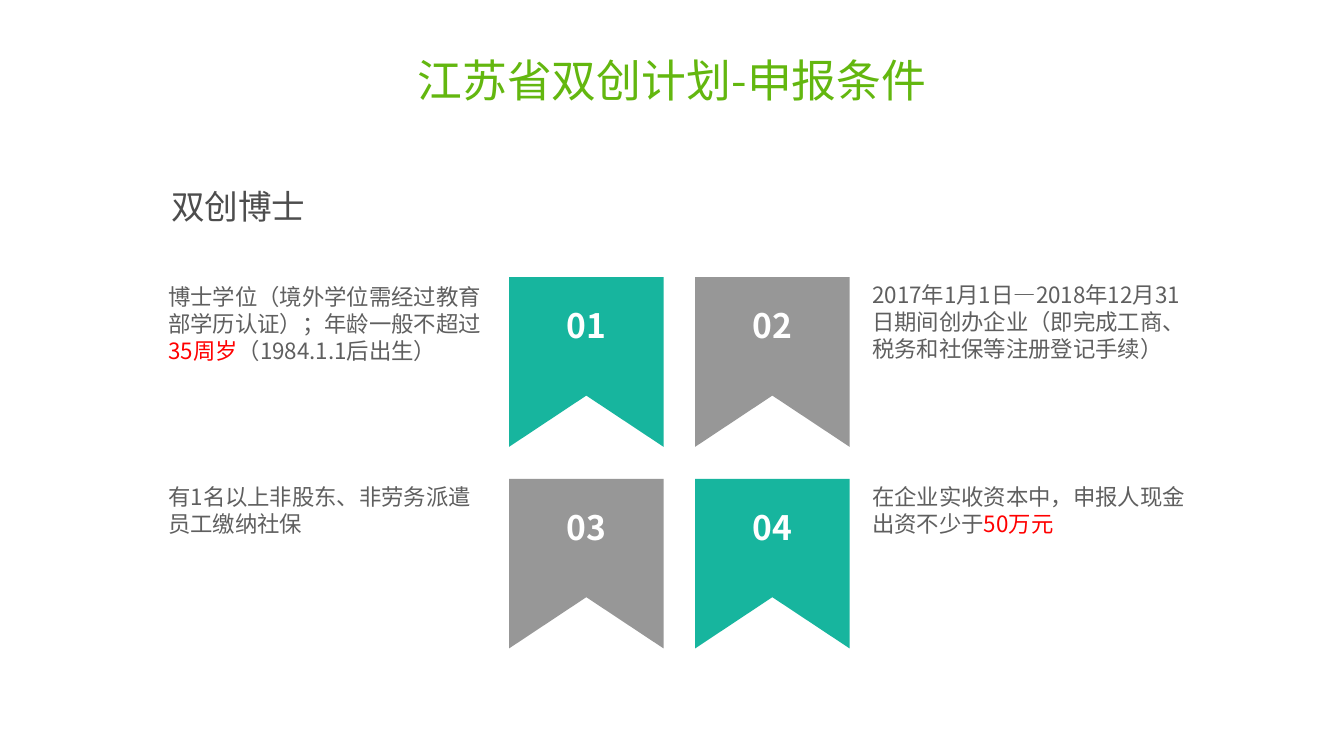
from dataclasses import dataclass

from lxml.etree import SubElement as SubEl
from pptx import Presentation
from pptx.dml.color import RGBColor as Rgb
from pptx.enum.shapes import MSO_SHAPE as Kind
from pptx.enum.text import MSO_ANCHOR as Anchor, PP_ALIGN as Align
from pptx.oxml.ns import qn
from pptx.util import Emu, Inches, Pt


@dataclass(frozen=True)
class Theme:
    font: str = "Noto Sans CJK SC"
    title: Rgb = Rgb(0x63, 0xB7, 0x0F)
    head: Rgb = Rgb(0x4D, 0x4D, 0x4D)
    body: Rgb = Rgb(0x5F, 0x5F, 0x5F)
    alert: Rgb = Rgb(0xFF, 0x00, 0x00)
    white: Rgb = Rgb(0xFF, 0xFF, 0xFF)
    teal: Rgb = Rgb(0x17, 0xB5, 0x9E)
    gray: Rgb = Rgb(0x97, 0x97, 0x97)
    big: int = 32
    mid: int = 24
    small: int = 16


@dataclass(frozen=True)
class Box:
    """Place and size in grid columns and rows."""
    col: float
    row: float
    wide: float
    high: float

    def emu(self) -> list[Emu]:
        return [unit(n) for n in (self.col, self.row, self.wide, self.high)]


@dataclass(frozen=True)
class Bit:
    words: str
    color: Rgb


@dataclass(frozen=True)
class Item:
    label: str
    fill: Rgb
    bits: tuple[Bit, ...]
    drop: float = 0


# Grid: 160 columns by 90 rows of square cells
COLS, ROWS = 160, 90
CELL = Inches(7.5) / ROWS
LOOK = Theme()

# Ribbon layout
LEFT, TOP = 60.6, 33
WIDE, HIGH, NOTCH = 18.4, 20.2, 6.1
STEP_X, STEP_Y = 22.15, 24
TAG_W, TAG_H, TAG_Y = 9, 6, 2.75

# Column and width of the notes on either side
SIDES = ((19.2, 39.8), (103, 39.5))

ITEMS = (
    Item("01", LOOK.teal, (
        Bit("博士学位（境外学位需经过教育部学历认证）；年龄一般不超过", LOOK.body),
        Bit("35周岁", LOOK.alert),
        Bit("（1984.1.1后出生）", LOOK.body)), 0.2),
    Item("02", LOOK.gray, (
        Bit("2017年1月1日—2018年12月31日期间创办企业"
            "（即完成工商、税务和社保等注册登记手续）", LOOK.body),)),
    Item("03", LOOK.gray, (
        Bit("有1名以上非股东、非劳务派遣员工缴纳社保", LOOK.body),)),
    Item("04", LOOK.teal, (
        Bit("在企业实收资本中，申报人现金出资不少于", LOOK.body),
        Bit("50万元", LOOK.alert))),
)


def unit(cells: float) -> Emu:
    return Emu(round(cells * CELL))


def add_run(para, bit: Bit, size: int, bold: bool = False) -> None:
    run = para.add_run()
    run.text = bit.words
    font = run.font
    font.name, font.size, font.bold = LOOK.font, Pt(size), bold
    font.color.rgb = bit.color
    SubEl(run._r.get_or_add_rPr(), qn("a:ea")).set("typeface", LOOK.font)


def add_text(slide, box: Box, bits: tuple[Bit, ...], size: int,
             align=Align.LEFT, anchor=Anchor.TOP, space: float = 1):
    frame = slide.shapes.add_textbox(*box.emu()).text_frame
    frame.word_wrap = True
    frame.vertical_anchor = anchor
    para = frame.paragraphs[0]
    para.alignment, para.line_spacing = align, space
    for bit in bits:
        add_run(para, bit, size)
    return frame


def paint(shape, fill: Rgb) -> None:
    shape.shadow.inherit = False
    shape.fill.solid()
    shape.fill.fore_color.rgb = fill
    shape.line.fill.background()


def add_flag(slide, col: float, row: float, item: Item) -> None:
    # Ribbon with a notched foot
    foot, mid, right = row + HIGH, col + WIDE / 2, col + WIDE
    pen = slide.shapes.build_freeform(unit(col), unit(row))
    ends = ((right, row), (right, foot), (mid, foot - NOTCH), (col, foot))
    pen.add_line_segments([(unit(x), unit(y)) for x, y in ends], close=True)
    paint(pen.convert_to_shape(), item.fill)

    # Number tag
    box = Box(mid - TAG_W / 2, row + TAG_Y, TAG_W, TAG_H)
    tag = slide.shapes.add_shape(Kind.RECTANGLE, *box.emu())
    paint(tag, item.fill)
    frame = tag.text_frame
    frame.vertical_anchor = Anchor.TOP
    para = frame.paragraphs[0]
    para.alignment = Align.CENTER
    add_run(para, Bit(item.label, LOOK.white), LOOK.mid, True)


def add_note(slide, side: int, row: float, item: Item) -> None:
    col, wide = SIDES[side]
    frame = add_text(slide, Box(col, row + item.drop, wide, 10.5),
                     item.bits, LOOK.small)
    frame.margin_left = frame.margin_right = Inches(0.07)
    frame.margin_top = frame.margin_bottom = Inches(0.04)


def main() -> None:
    deck = Presentation()
    deck.slide_width, deck.slide_height = unit(COLS), unit(ROWS)
    slide = deck.slides.add_slide(deck.slide_layouts[6])

    # Title and heading
    add_text(slide, Box(26, 3.25, 108, 13.3),
             (Bit("江苏省双创计划-申报条件", LOOK.title),),
             LOOK.big, Align.CENTER, Anchor.MIDDLE, 0.9)
    add_text(slide, Box(19.2, 21.1, 24.7, 7.3),
             (Bit("双创博士", LOOK.head),), LOOK.mid, Align.JUSTIFY, space=1.1)

    # Two by two conditions
    for i, item in enumerate(ITEMS):
        line, side = divmod(i, 2)
        row = TOP + line * STEP_Y
        add_flag(slide, LEFT + side * STEP_X, row, item)
        add_note(slide, side, row, item)

    deck.save("out.pptx")


if __name__ == "__main__":
    main()
